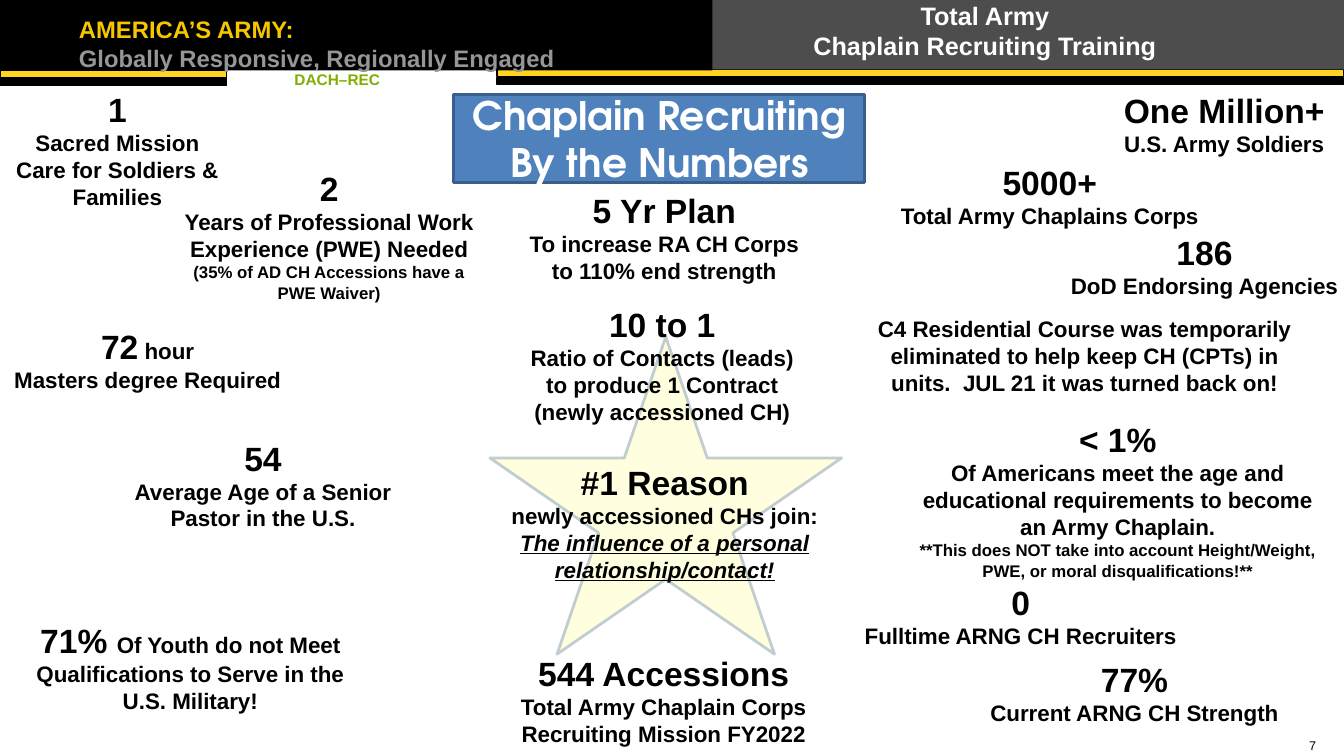
from lxml import etree
from pptx import Presentation
from pptx.dml.color import RGBColor
from pptx.enum.shapes import MSO_SHAPE
from pptx.enum.text import MSO_ANCHOR, MSO_AUTO_SIZE, PP_ALIGN
from pptx.oxml.ns import qn
from pptx.util import Pt

RECT, STAR = MSO_SHAPE.RECTANGLE, MSO_SHAPE.STAR_5_POINT
CENTER, LEFT = PP_ALIGN.CENTER, PP_ALIGN.LEFT
TITLE_ONLY = 5
SLIDE_W, SLIDE_H = 960, 540
BIG, MID, SMALL = 24, 16, 12
BODY_FONT, TITLE_FONT = "Arial", "TeX Gyre Adventor"

COLORS = {
    "black": "000000", "white": "FFFFFF", "gold": "FFD521", "gray": "4D4D4D",
    "motto": "F6C700", "tagline": "969696", "office": "81AD00",
    "blue": "4F81BD", "edge": "3A5F8C", "star": "FFFF00",
}

# left, top, width, height, fill, outline
HEADER_BARS = [
    (355, 49.7, 605, 5, "gold", "black"),
    (355, 55.4, 605, 5, "black", "black"),
    (0, 50.4, 162, 5.8, "gold", "black"),
    (0, 55.4, 162, 5.8, "black", "black"),
    (355.7, -0.7, 604.8, 50.4, "gray", None),
    (0, 0, 509, 50.4, "black", None),
]

TITLE = ["Chaplain Recruiting", "By the Numbers"]
MOTTO = [[("AMERICA’S ARMY:", 17, "motto")],
         [("Globally Responsive, Regionally Engaged", 17, "tagline")]]
OFFICE = [[("DACH–REC", 11, "office")]]
TRAINING = [[("Total Army", 18, "white")],
            [("Chaplain Recruiting Training", 18, "white")]]
PAGE = [[("7", 9, "black")]]

# box, then paragraphs of (words, size) runs
FACTS = [
    ((-23.8, 59.8, 215.3, 87.1),
     [[("1", BIG)], [("Sacred Mission", MID)], [("Care for Soldiers & Families", MID)]]),
    ((121, 116.6, 228.2, 113),
     [[("2", BIG)], [("Years of Professional Work Experience (PWE) Needed", MID)],
      [("(35% of AD CH Accessions have a PWE Waiver)", SMALL)]]),
    ((-2.9, 229, 216.7, 53.3),
     [[("72", BIG), (" hour", MID)], [("Masters degree Required", MID)]]),
    ((72.7, 308.9, 230.4, 77.8),
     [[("54", BIG)], [("Average Age of a Senior Pastor in the U.S.", MID)]]),
    ((8.6, 439.2, 254.9, 100.8),
     [[("71% ", BIG),
       ("Of Youth do not Meet Qualifications to Serve in the U.S. Military!", MID)]]),
    ((365.8, 131.8, 217.4, 92.2),
     [[("5 Yr Plan", BIG)], [("To increase RA CH Corps to 110% end strength", MID)]]),
    ((364.3, 213.8, 217.4, 92.2),
     [[("10 to 1", BIG)],
      [("Ratio of Contacts (leads) to produce 1 Contract (newly accessioned CH)", MID)]]),
    ((360, 463, 228.2, 76),
     [[("544 Accessions", BIG)],
      [("Total Army Chaplain Corps Recruiting Mission FY2022", MID)]]),
    ((780.5, 60.5, 187.9, 51.8),
     [[("One Million+", BIG)], [("U.S. Army Soldiers", MID)]]),
    ((631.4, 112.3, 236.9, 54),
     [[("5000+", BIG)], [("Total Army Chaplains Corps", MID)]]),
    ((748.8, 162, 223.2, 71.3),
     [[("186", BIG)], [("DoD Endorsing Agencies", MID)]]),
    ((617.8, 221.8, 313.9, 93.6),
     [[("C4 Residential Course was temporarily eliminated to help keep CH (CPTs) "
        "in units.  JUL 21 it was turned back on!", MID)]]),
    ((642.2, 295.9, 312.5, 121.7),
     [[("< 1%", BIG)],
      [("Of Americans meet the age and educational requirements to become "
        "an Army Chaplain.", MID)],
      [("**This does NOT take into account Height/Weight, PWE, or moral "
        "disqualifications!**", SMALL)]]),
    ((589, 411.8, 280.1, 62.6),
     [[("0", BIG)], [("Fulltime ARNG CH Recruiters", MID)]]),
    ((698.4, 467.3, 223.9, 64.8),
     [[("77%", BIG)], [("Current ARNG CH Strength", MID)]]),
]
REASON_BOX = (356.4, 326.2, 236.9, 124.6)
REASON = [[("#1 Reason", BIG)],
          [("newly accessioned CHs join: ", MID),
           ("The influence of a personal relationship/contact!", MID)]]


def rgb(name):
    return RGBColor.from_string(COLORS[name])


def points(box):
    return [Pt(v) for v in box]


def paint(shape, fill, outline, width):
    shape.fill.solid()
    shape.fill.fore_color.rgb = rgb(fill)
    if outline:
        shape.line.color.rgb = rgb(outline)
        shape.line.width = Pt(width)
    else:
        shape.line.fill.background()


def add_figure(slide, kind, box, fill, outline, width=0.75):
    figure = slide.shapes.add_shape(kind, *points(box))
    figure.shadow.inherit = False
    paint(figure, fill, outline, width)
    return figure


def set_opacity(color_parent, percent):
    color = color_parent.find(qn("a:solidFill"))[0]
    etree.SubElement(color, qn("a:alpha"), val=str(percent * 1000))


def set_margins(frame, side, top):
    frame.margin_left = frame.margin_right = Pt(side)
    frame.margin_top = frame.margin_bottom = Pt(top)


def write_run(paragraph, words, size, color="black", font=BODY_FONT, bold=True):
    run = paragraph.add_run()
    run.text = words
    run.font.size, run.font.name, run.font.bold = Pt(size), font, bold
    run.font.color.rgb = rgb(color)
    return run


def add_words(slide, box, paragraphs, align=CENTER, margins=(7.2, 3.6), bold=True):
    """Add a wrapping text box and return its runs."""
    frame = slide.shapes.add_textbox(*points(box)).text_frame
    frame.word_wrap = True
    set_margins(frame, *margins)
    runs = []
    for i, parts in enumerate(paragraphs):
        paragraph = frame.add_paragraph() if i else frame.paragraphs[0]
        paragraph.alignment = align
        runs += [write_run(paragraph, *part, bold=bold) for part in parts]
    return runs


def add_text_shadow(run):
    effects = etree.SubElement(run.font._element, qn("a:effectLst"))
    shadow = etree.Element(qn("a:outerShdw"), dist="12700", dir="2700000")
    etree.SubElement(shadow, qn("a:srgbClr"), val=COLORS["black"])
    effects.append(shadow)
    run.font._element.find(qn("a:solidFill")).addnext(effects)


def add_header(slide):
    for *box, fill, outline in HEADER_BARS:
        add_figure(slide, RECT, box, fill, outline)
    add_words(slide, (56.4, 10.8, 440, 40), MOTTO, LEFT, (0, 0))
    office, = add_words(slide, (208.1, 48.5, 86.4, 15.8), OFFICE, LEFT, (2.2, 1.4))
    add_text_shadow(office)
    add_words(slide, (513, 0, 381, 50.4), TRAINING, CENTER, (0, 0))


def add_title(slide):
    title = slide.shapes.title
    title.left, title.top, title.width, title.height = points((324, 67.7, 293.8, 62.6))
    paint(title, "blue", "edge", 2)
    frame = title.text_frame
    frame.word_wrap, frame.auto_size = True, MSO_AUTO_SIZE.NONE
    frame.vertical_anchor = MSO_ANCHOR.MIDDLE
    set_margins(frame, 0, 0)
    for i, words in enumerate(TITLE):
        paragraph = frame.add_paragraph() if i else frame.paragraphs[0]
        paragraph.alignment = CENTER
        paragraph.space_before = Pt(0)
        write_run(paragraph, words, 28, "white", TITLE_FONT)


def main():
    deck = Presentation()
    deck.slide_width, deck.slide_height = Pt(SLIDE_W), Pt(SLIDE_H)
    slide = deck.slides.add_slide(deck.slide_layouts[TITLE_ONLY])
    add_header(slide)
    add_title(slide)
    star = add_figure(slide, STAR, (349.9, 240.5, 251.3, 226.8), "star", "edge", 2)
    set_opacity(star._element.spPr, 12)
    set_opacity(star._element.spPr.find(qn("a:ln")), 31)
    for box, paragraphs in FACTS:
        add_words(slide, box, paragraphs)
    influence = add_words(slide, REASON_BOX, REASON)[-1]
    influence.font.italic = influence.font.underline = True
    add_words(slide, (928, 523.4, 30, 16), PAGE, LEFT, bold=False)
    deck.save("out.pptx")


if __name__ == "__main__":
    main()
